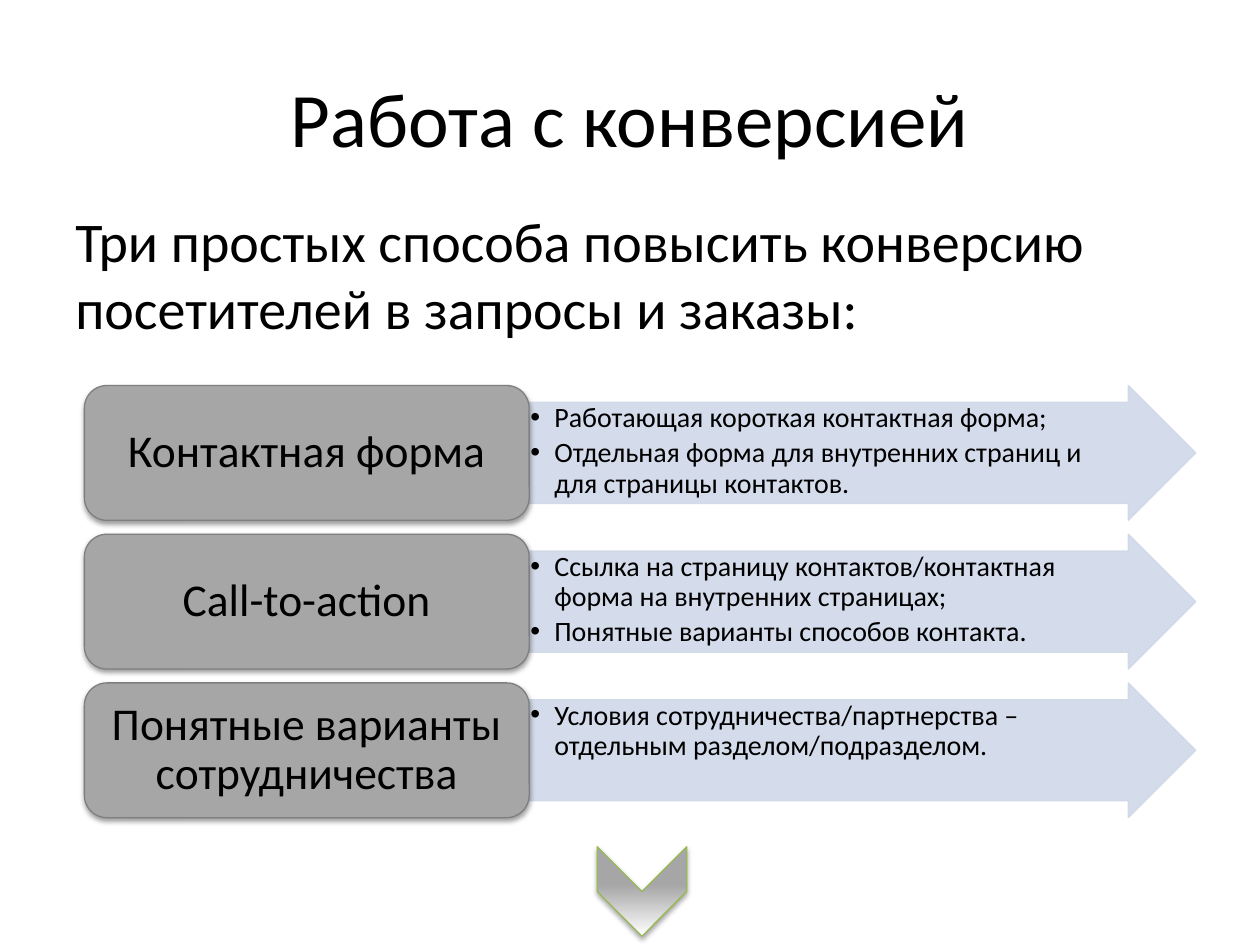
from lxml.etree import SubElement
from pptx import Presentation
from pptx.dml.color import RGBColor
from pptx.enum.shapes import MSO_SHAPE
from pptx.enum.text import MSO_ANCHOR, PP_ALIGN
from pptx.oxml.ns import qn
from pptx.util import Inches, Pt

HEADING = "Работа с конверсией"
INTRO = "Три простых способа повысить конверсию посетителей в запросы и заказы:"
METHODS = [
    ("Контактная форма", [
        "Работающая короткая контактная форма;",
        "Отдельная форма для внутренних страниц и для страницы контактов.",
    ]),
    ("Call-to-action", [
        "Ссылка на страницу контактов/контактная форма на внутренних страницах;",
        "Понятные варианты способов контакта.",
    ]),
    ("Понятные варианты сотрудничества", [
        "Условия сотрудничества/партнерства – отдельным разделом/подразделом.",
    ]),
]

BLACK = RGBColor(0x00, 0x00, 0x00)
WHITE = RGBColor(0xFF, 0xFF, 0xFF)
GRAY = RGBColor(0xA6, 0xA6, 0xA6)
DARK_GRAY = RGBColor(0x7F, 0x7F, 0x7F)
PALE_BLUE = RGBColor(0xD0, 0xD8, 0xE8)
GREEN = RGBColor(0x98, 0xB9, 0x55)

ROW_TOP, ROW_HEIGHT, ROW_STEP = 3.06, 1.07, 1.18
LABEL_LEFT, LABEL_WIDTH, ARROW_WIDTH = 0.67, 3.53, 5.29
INDENT = Inches(0.19)

LABEL_FRAME = {
    "vertical_anchor": MSO_ANCHOR.MIDDLE, "word_wrap": True,
    "margin_left": Inches(0.11), "margin_right": Inches(0.11),
    "margin_top": Inches(0.05), "margin_bottom": Inches(0.05),
}
DETAIL_FRAME = {
    "vertical_anchor": MSO_ANCHOR.TOP, "word_wrap": True,
    "margin_left": Inches(0.01), "margin_right": Inches(0.28),
    "margin_top": Inches(0.01), "margin_bottom": Inches(0.01),
}
LABEL_PARAGRAPH = {"alignment": PP_ALIGN.CENTER, "line_spacing": 0.9}
DETAIL_PARAGRAPH = {
    "alignment": PP_ALIGN.LEFT, "line_spacing": 0.9, "space_after": Pt(2.9),
}


def apply(target, values):
    for name, value in values.items():
        setattr(target, name, value)


def write(frame, texts, size, frame_format, paragraph_format):
    apply(frame, frame_format)
    for index, text in enumerate(texts):
        paragraph = frame.add_paragraph() if index else frame.paragraphs[0]
        paragraph.text = text
        apply(paragraph, paragraph_format)
        font = paragraph.runs[0].font
        apply(font, {"name": "Calibri", "size": Pt(size)})
        font.color.rgb = BLACK


def add_bullet(paragraph):
    properties = paragraph._p.get_or_add_pPr()
    properties.set("marL", str(INDENT))
    properties.set("indent", str(-INDENT))
    SubElement(properties, qn("a:buFont"), typeface="Arial")
    SubElement(properties, qn("a:buChar"), char="•")


def add_figure(slide, preset, left, top, width, height, outline):
    figure = slide.shapes.add_shape(
        preset, Inches(left), Inches(top), Inches(width), Inches(height))
    figure.shadow.inherit = False
    figure.line.color.rgb = outline
    figure.line.width = Pt(0.75)
    return figure


def fill_solid(figure, color):
    figure.fill.solid()
    figure.fill.fore_color.rgb = color


def add_shadow(figure, distance, opacity):
    effects = figure._element.spPr.find(qn("a:effectLst"))
    shadow = SubElement(
        effects, qn("a:outerShdw"), blurRad=str(Pt(3.1)),
        dist=str(Pt(distance)), dir="5400000", rotWithShape="0")
    color = SubElement(shadow, qn("a:srgbClr"), val=str(BLACK))
    SubElement(color, qn("a:alpha"), val=str(opacity * 1000))


def add_method(slide, top, label_text, details):
    arrow = add_figure(slide, MSO_SHAPE.RIGHT_ARROW, LABEL_LEFT + LABEL_WIDTH,
                       top, ARROW_WIDTH, ROW_HEIGHT, PALE_BLUE)
    arrow.adjustments[0] = 0.75
    arrow.adjustments[1] = 0.5
    fill_solid(arrow, PALE_BLUE)
    for color in arrow._element.spPr.iter(qn("a:srgbClr")):
        SubElement(color, qn("a:alpha"), val="90000")
    write(arrow.text_frame, details, 16, DETAIL_FRAME, DETAIL_PARAGRAPH)
    for paragraph in arrow.text_frame.paragraphs:
        add_bullet(paragraph)

    label = add_figure(slide, MSO_SHAPE.ROUNDED_RECTANGLE, LABEL_LEFT, top,
                       LABEL_WIDTH, ROW_HEIGHT, DARK_GRAY)
    fill_solid(label, GRAY)
    add_shadow(label, 1.6, 38)
    write(label.text_frame, [label_text], 26, LABEL_FRAME, LABEL_PARAGRAPH)


def main():
    deck = Presentation()
    apply(deck, {"slide_width": Inches(10), "slide_height": Inches(7.5)})
    slide = deck.slides.add_slide(deck.slide_layouts[5])

    title = slide.shapes.title
    apply(title, {"left": Inches(0.5), "top": Inches(0.3),
                  "width": Inches(9), "height": Inches(1.25)})
    write(title.text_frame, [HEADING], 44,
          {"vertical_anchor": MSO_ANCHOR.MIDDLE}, {"alignment": PP_ALIGN.CENTER})

    intro = slide.shapes.add_textbox(
        Inches(0.5), Inches(1.59), Inches(9), Inches(1.61))
    write(intro.text_frame, [INTRO], 32, {"word_wrap": True}, {})

    for row, (label_text, details) in enumerate(METHODS):
        add_method(slide, ROW_TOP + row * ROW_STEP, label_text, details)

    chevron = add_figure(slide, MSO_SHAPE.CHEVRON, 4.74, 6.72, 0.71, 0.71, GREEN)
    chevron.rotation = 90
    chevron.fill.gradient()
    chevron.fill.gradient_angle = 0
    stops = [(0.42, GRAY), (1, WHITE)]
    for stop, (position, color) in zip(chevron.fill.gradient_stops, stops):
        stop.position = position
        stop.color.rgb = color
    add_shadow(chevron, 1.8, 35)

    deck.save("out.pptx")


if __name__ == "__main__":
    main()
